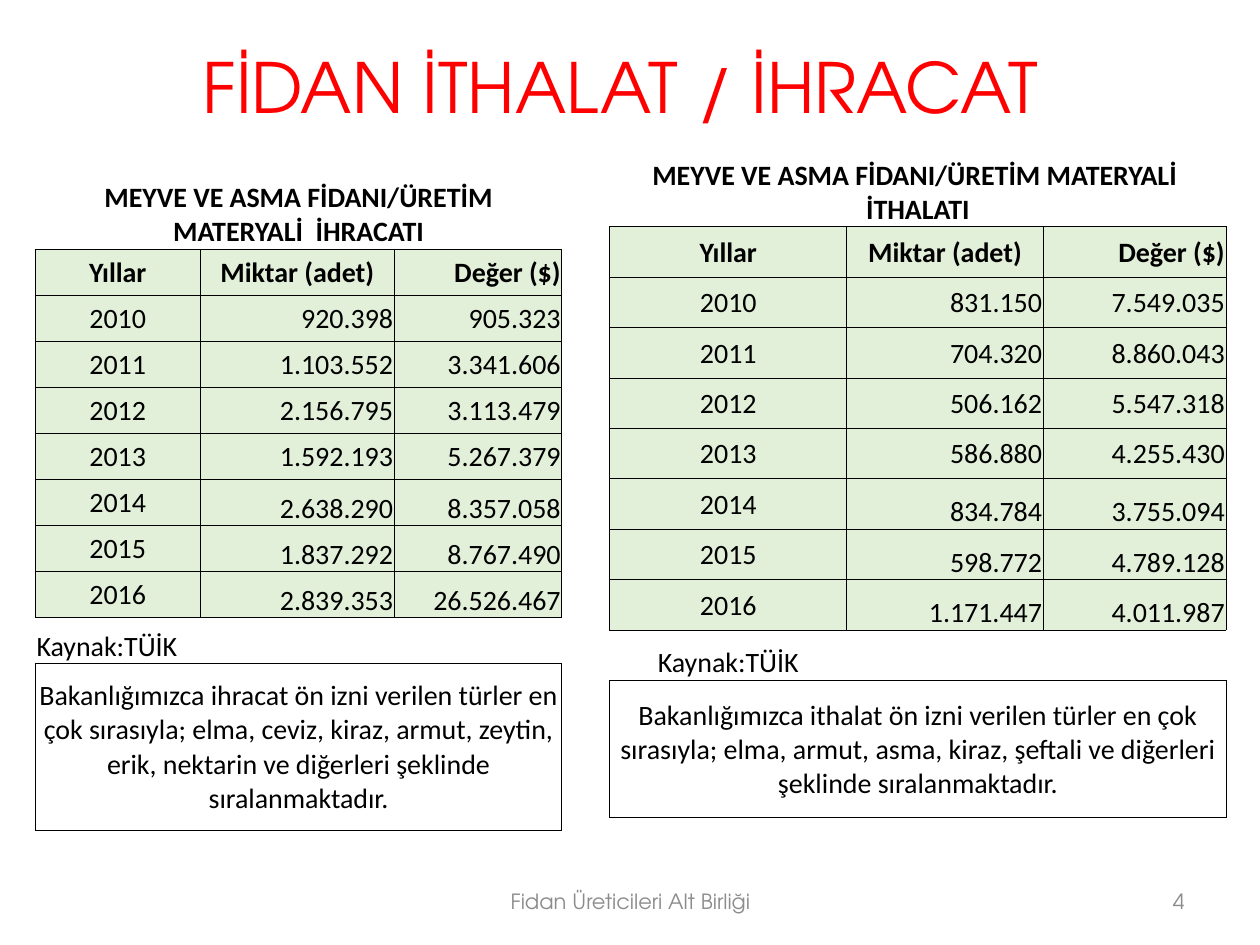
from lxml.etree import SubElement
from pptx import Presentation
from pptx.dml.color import RGBColor
from pptx.enum.text import MSO_ANCHOR, PP_ALIGN
from pptx.oxml.ns import qn
from pptx.util import Inches, Pt

PLAIN_STYLE = "{2D5ABB26-0587-4C30-8999-92F81FD0307C}"
TITLE_FONT = "TeX Gyre Adventor"
HEADERS = ["Yıllar", "Miktar (adet)", "Değer ($)"]
SOURCE = "Kaynak:TÜİK"
LEFT, CENTER, RIGHT = PP_ALIGN.LEFT, PP_ALIGN.CENTER, PP_ALIGN.RIGHT
MIDDLE, BOTTOM = MSO_ANCHOR.MIDDLE, MSO_ANCHOR.BOTTOM

EXPORTS = [
    ("2010", "920.398", "905.323"),
    ("2011", "1.103.552", "3.341.606"),
    ("2012", "2.156.795", "3.113.479"),
    ("2013", "1.592.193", "5.267.379"),
    ("2014", "2.638.290", "8.357.058"),
    ("2015", "1.837.292", "8.767.490"),
    ("2016", "2.839.353", "26.526.467"),
]
IMPORTS = [
    ("2010", "831.150", "7.549.035"),
    ("2011", "704.320", "8.860.043"),
    ("2012", "506.162", "5.547.318"),
    ("2013", "586.880", "4.255.430"),
    ("2014", "834.784", "3.755.094"),
    ("2015", "598.772", "4.789.128"),
    ("2016", "1.171.447", "4.011.987"),
]


def rgb(color):
    return RGBColor.from_string(color)


def style_paragraph(p, text, font, size, color, align, bold=False):
    p.text = text
    p.alignment = align
    p.font.name = font
    p.font.size = Pt(size)
    p.font.bold = bold
    p.font.color.rgb = rgb(color)


def add_text(s, box, text, size, color, align):
    sp = s.shapes.add_textbox(*(Inches(v) for v in box))
    tf = sp.text_frame
    tf.word_wrap = True
    tf.vertical_anchor = MIDDLE
    style_paragraph(tf.paragraphs[0], text, TITLE_FONT, size, color, align)


def set_borders(cell, sides):
    tc_pr = cell._tc.get_or_add_tcPr()
    for side in "LRTB":
        ln = SubElement(tc_pr, qn(f"a:ln{side}"), w=str(Pt(0.5)))
        if side in sides:
            fill = SubElement(ln, qn("a:solidFill"))
            SubElement(fill, qn("a:srgbClr"), val="000000")
        else:
            SubElement(ln, qn("a:noFill"))


def style_cell(cell, text="", align=CENTER, anchor=MIDDLE, bold=False, sides="LRTB", fill=None):
    cell.margin_left = cell.margin_right = cell.margin_top = Inches(0.01)
    cell.margin_bottom = 0
    cell.vertical_anchor = anchor
    style_paragraph(cell.text_frame.paragraphs[0], text, "Calibri", 16, "000000", align, bold)
    set_borders(cell, sides)
    if fill:
        cell.fill.solid()
        cell.fill.fore_color.rgb = rgb(fill)
    else:
        cell.fill.background()


def style_band(table, row, text, merged=True, **options):
    cells = [table.cell(row, c) for c in range(len(HEADERS))]
    if merged:
        cells[0].merge(cells[-1])
    for cell in cells:
        style_cell(cell, text if cell is cells[0] else "", **options)


def add_trade_table(s, left, top, widths, title_height, row_height, note_height,
                    title, data, source_align, note):
    heights = [title_height] + [row_height] * (len(data) + 2) + [note_height]
    frame = s.shapes.add_table(len(heights), len(widths), Inches(left), Inches(top),
                               Inches(sum(widths)), Inches(sum(heights)))
    table = frame.table
    table.first_row = table.horz_banding = False
    table._tbl.tblPr.find(qn("a:tableStyleId")).text = PLAIN_STYLE
    for column, width in zip(table.columns, widths):
        column.width = Inches(width)
    for row, height in zip(table.rows, heights):
        row.height = Inches(height)

    style_band(table, 0, title, anchor=BOTTOM, bold=True, sides="B")
    for i, values in enumerate([HEADERS] + data):
        for j, value in enumerate(values):
            is_header = i == 0
            centered = j == 0 or (is_header and j == 1)
            low = j > 0 and not is_header and values[0] >= "2014"
            style_cell(table.cell(i + 1, j), value, CENTER if centered else RIGHT,
                       BOTTOM if low else MIDDLE, is_header, fill="E2EFD9")
    last = len(heights) - 1
    style_band(table, last - 1, SOURCE, merged=False, align=source_align, anchor=BOTTOM, sides="TB")
    style_band(table, last, note)


def main():
    prs = Presentation()
    prs.slide_width, prs.slide_height = Inches(10), Inches(7.5)
    s = prs.slides.add_slide(prs.slide_layouts[6])

    add_text(s, (0.5, 0.3, 9, 0.77), "FİDAN İTHALAT / İHRACAT ", 39.6, "FF0000", CENTER)
    add_text(s, (3.42, 6.95, 3.17, 0.4), "Fidan Üreticileri Alt Birliği", 12, "8C8C8C", CENTER)
    add_text(s, (7.17, 6.95, 2.33, 0.4), "4", 12, "8C8C8C", RIGHT)

    add_trade_table(
        s, 0.28, 1.31, [1.31, 1.54, 1.33], 0.67, 3.29 / 9, 1.32,
        "MEYVE VE ASMA FİDANI/ÜRETİM MATERYALİ  İHRACATI", EXPORTS, LEFT,
        "Bakanlığımızca ihracat ön izni verilen türler en çok sırasıyla; elma, ceviz, kiraz, "
        "armut, zeytin, erik, nektarin ve diğerleri şeklinde sıralanmaktadır.")
    add_trade_table(
        s, 4.84, 1.07, [1.88, 1.56, 1.45], 0.73, 0.4, 1.09,
        "MEYVE VE ASMA FİDANI/ÜRETİM MATERYALİ  İTHALATI", IMPORTS, CENTER,
        "Bakanlığımızca ithalat ön izni verilen türler en çok sırasıyla; elma, armut, asma, "
        "kiraz, şeftali ve diğerleri şeklinde sıralanmaktadır.")

    prs.save("out.pptx")


if __name__ == "__main__":
    main()
